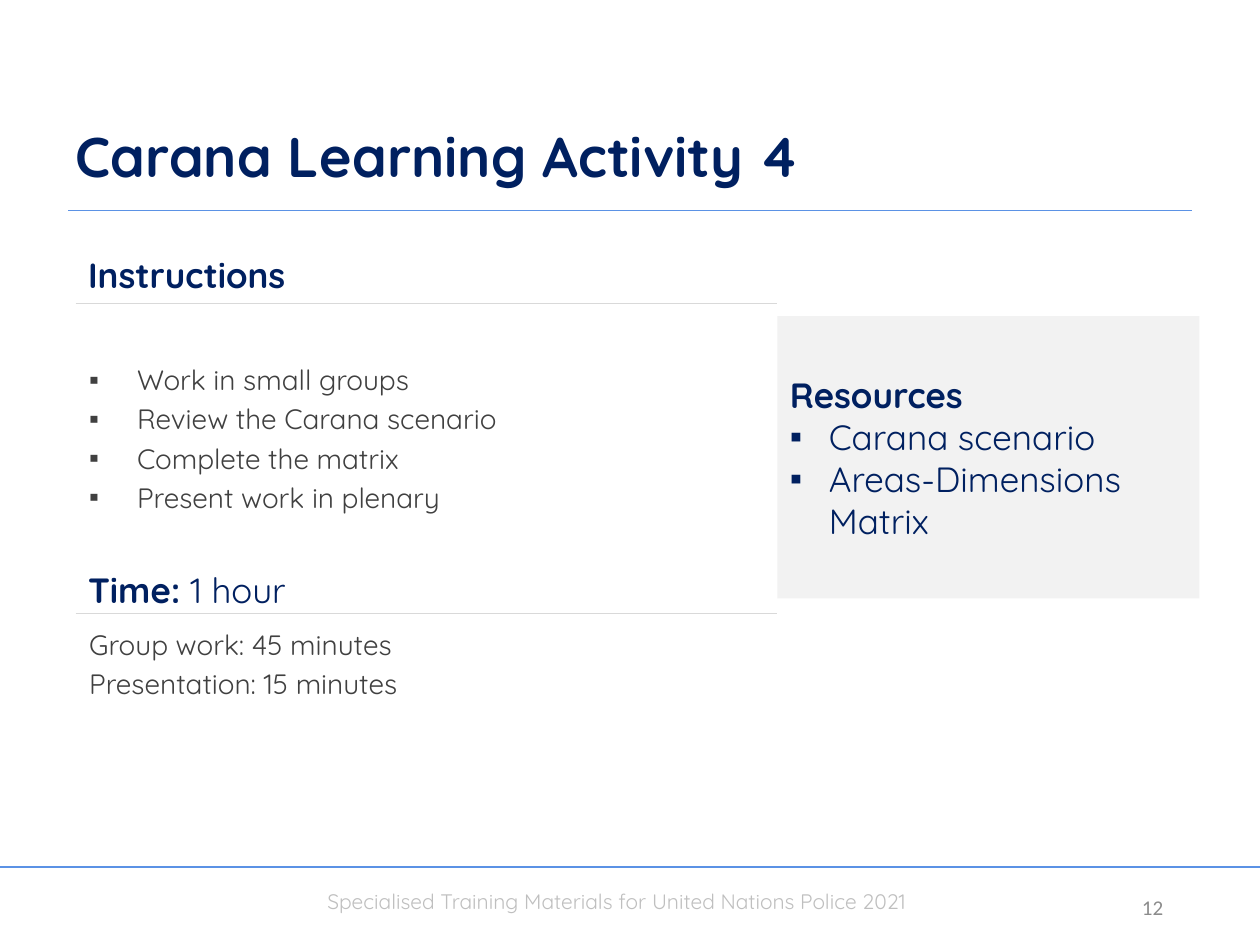
from dataclasses import dataclass
from typing import Optional

from lxml.etree import SubElement
from pptx import Presentation
from pptx.dml.color import RGBColor
from pptx.enum.shapes import MSO_CONNECTOR, MSO_SHAPE
from pptx.enum.text import MSO_ANCHOR as Anchor, PP_ALIGN as Align
from pptx.oxml.ns import qn
from pptx.util import Inches, Pt

NAVY = RGBColor(0x00, 0x20, 0x60)
BLUE = RGBColor(0x5B, 0x92, 0xE5)
DARK_GRAY = RGBColor(0x40, 0x40, 0x40)
NUMBER_GRAY = RGBColor(0x8C, 0x8C, 0x8C)
FOOTER_GRAY = RGBColor(0xBF, 0xBF, 0xBF)
RULE_GRAY = RGBColor(0xD9, 0xD9, 0xD9)
PANEL_GRAY = RGBColor(0xF2, 0xF2, 0xF2)


@dataclass(frozen=True)
class Style:
    size: float
    color: RGBColor
    bold: Optional[bool] = None
    font: str = "Quicksand"
    align: Align = Align.LEFT
    indent: float = 0
    bullet: bool = False
    space_before: float = 0
    space_after: float = 0
    line_spacing: object = None


@dataclass(frozen=True)
class Rule:
    left: float
    right: float
    top: float
    color: RGBColor


TITLE = Style(32, NAVY, bold=True, line_spacing=Pt(34.4))
HEADING = Style(20, NAVY, indent=0.06, space_after=18, line_spacing=0.9)
STEP = Style(16, DARK_GRAY, indent=0.38, bullet=True, space_before=3.2)
DURATION = Style(16, DARK_GRAY, space_before=3.2)
RESOURCE_HEADING = Style(20, NAVY, bold=True)
RESOURCE = Style(20, NAVY, indent=0.31, bullet=True)
FOOTER = Style(12, FOOTER_GRAY)
PAGE_NUMBER = Style(12, NUMBER_GRAY, font="Calibri", align=Align.RIGHT)

RULES = [
    Rule(0, 10, 6.88, BLUE),
    Rule(0.54, 9.46, 1.67, BLUE),
    Rule(0.6, 6.17, 2.41, RULE_GRAY),
    Rule(0.6, 6.17, 4.87, RULE_GRAY),
]


def add_rule(slide, rule: Rule) -> None:
    line = slide.shapes.add_connector(
        MSO_CONNECTOR.STRAIGHT, Inches(rule.left), Inches(rule.top), Inches(rule.right), Inches(rule.top)
    )
    line.line.color.rgb = rule.color
    line.line.width = Pt(0.75)
    SubElement(line._element.spPr, qn("a:effectLst"))


def add_paragraph(frame, text: str, style: Style):
    """Fill the frame's empty first paragraph, or append a new one."""
    first = not frame.paragraphs[0].runs
    paragraph = frame.paragraphs[0] if first else frame.add_paragraph()
    paragraph.add_run().text = text
    paragraph.alignment = style.align
    paragraph.space_before = Pt(0 if first else style.space_before)
    paragraph.space_after = Pt(style.space_after)
    if style.line_spacing:
        paragraph.line_spacing = style.line_spacing
    properties = paragraph._p.get_or_add_pPr()
    if style.indent:
        properties.set("marL", str(Inches(style.indent)))
    if style.bullet:
        properties.set("indent", str(-Inches(style.indent)))
        SubElement(properties, qn("a:buFont"), typeface="Arial")
        SubElement(properties, qn("a:buChar"), char="▪")
    font = paragraph.font
    font.name = style.font
    font.size = Pt(style.size)
    font.bold = style.bold
    font.color.rgb = style.color
    return paragraph


def add_text(slide, left: float, top: float, width: float, height: float,
             lines: list[str], style: Style, anchor: Anchor = Anchor.TOP):
    box = slide.shapes.add_textbox(Inches(left), Inches(top), Inches(width), Inches(height))
    frame = box.text_frame
    frame.word_wrap = True
    frame.vertical_anchor = anchor
    for line in lines:
        add_paragraph(frame, line, style)
    return frame


def add_heading(slide, top: float, label: str, detail: str = "") -> None:
    """Add a bold label, optionally followed by a regular-weight detail."""
    paragraph = add_text(slide, 0.54, top, 3.29, 0.5, [label], HEADING).paragraphs[0]
    paragraph.runs[0].font.bold = True
    if detail:
        paragraph.add_run().text = detail


def add_resources(slide, names: list[str]) -> None:
    panel = slide.shapes.add_shape(
        MSO_SHAPE.RECTANGLE, Inches(6.17), Inches(2.51), Inches(3.35), Inches(2.24)
    )
    panel.shadow.inherit = False
    panel.fill.solid()
    panel.fill.fore_color.rgb = PANEL_GRAY
    panel.line.fill.background()
    frame = panel.text_frame
    frame.word_wrap = True
    frame.vertical_anchor = Anchor.MIDDLE
    add_paragraph(frame, "Resources", RESOURCE_HEADING)
    for name in names:
        add_paragraph(frame, name, RESOURCE)


def main() -> None:
    presentation = Presentation()
    presentation.slide_width = Inches(10)
    presentation.slide_height = Inches(7.5)
    slide = presentation.slides.add_slide(presentation.slide_layouts[6])

    for rule in RULES:
        add_rule(slide, rule)
    add_text(slide, 0.5, 0.5, 7.83, 1.05, ["Carana Learning Activity 4"], TITLE, Anchor.BOTTOM)

    add_heading(slide, 2, "Instructions")
    steps = ["Work in small groups", "Review the Carana scenario", "Complete the matrix", "Present work in plenary"]
    add_text(slide, 0.61, 2.83, 5.5, 1.4, steps, STEP)

    add_heading(slide, 4.5, "Time: ", "1 hour")
    durations = ["Group work: 45 minutes", "Presentation: 15 minutes"]
    add_text(slide, 0.61, 4.93, 6.25, 0.75, durations, DURATION)

    add_resources(slide, ["Carana scenario", "Areas-Dimensions Matrix"])

    footer = "Specialised Training Materials for United Nations Police 2021"
    add_text(slide, 2.5, 7, 5, 0.3, [footer], FOOTER)
    add_text(slide, 8.08, 7, 1.25, 0.4, ["12"], PAGE_NUMBER, Anchor.MIDDLE)
    presentation.save("out.pptx")


if __name__ == "__main__":
    main()
